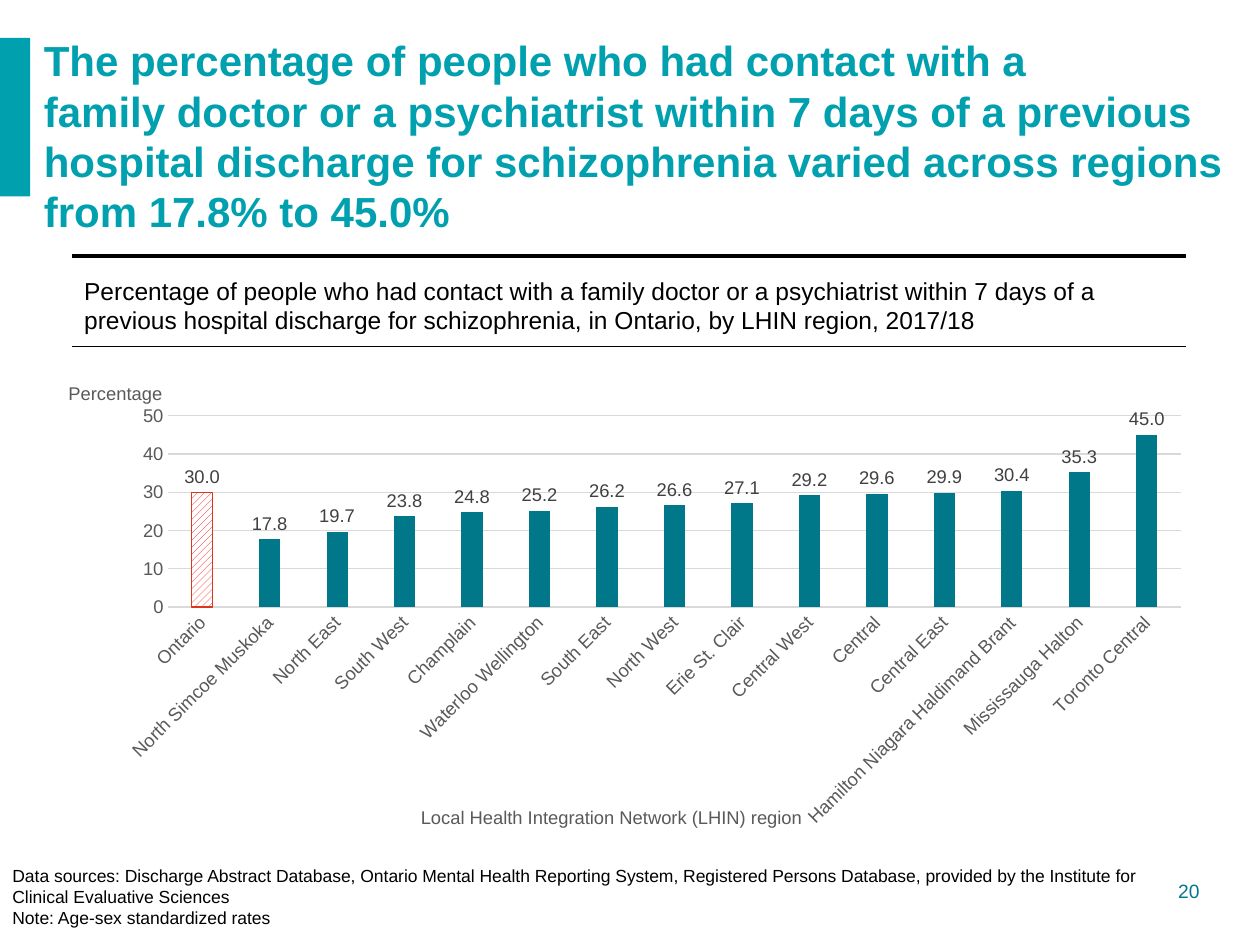
import pptx
import pptx.chart.data
import pptx.dml.color
import pptx.enum.chart
import pptx.enum.dml
import pptx.enum.shapes
import pptx.enum.text
import pptx.oxml
import pptx.oxml.ns
import pptx.util

Pt = pptx.util.Pt
qn = pptx.oxml.ns.qn

TEAL = "00A0AF"
DARK_TEAL = "00788A"
BLACK = "000000"
GREY = "595959"
LIGHT_GREY = "D9D9D9"

RATES = {
    "Ontario": 30.0,
    "North Simcoe Muskoka": 17.8,
    "North East": 19.7,
    "South West": 23.8,
    "Champlain": 24.8,
    "Waterloo Wellington": 25.2,
    "South East": 26.2,
    "North West": 26.6,
    "Erie St. Clair": 27.1,
    "Central West": 29.2,
    "Central": 29.6,
    "Central East": 29.9,
    "Hamilton Niagara Haldimand Brant": 30.4,
    "Mississauga Halton": 35.3,
    "Toronto Central": 45.0,
}


def color(hex_string):
    return pptx.dml.color.RGBColor.from_string(hex_string)


def set_layout(element, index, **fractions):
    """Place a chart part by fractions of the chart's width and height."""
    for layout in element.findall(qn("c:layout")):
        element.remove(layout)
    layout = pptx.oxml.parse_xml(f"<c:layout {pptx.oxml.ns.nsdecls('c')}><c:manualLayout/></c:layout>")
    settings = {"xMode": "edge", "yMode": "edge", **fractions}
    for name, value in settings.items():
        layout[0].makeelement(qn(f"c:{name}"))
        child = layout[0].makeelement(qn(f"c:{name}"), {"val": str(value)})
        layout[0].append(child)
    element.insert(index, layout)


class SlideBuilder:
    font_name = "Arial"
    chart_size = 10.5

    def __init__(self, slide):
        self.slide = slide

    def style_font(self, font, size, hex_string, bold=False):
        font.name = self.font_name
        font.size = Pt(size)
        font.bold = bold
        font.color.rgb = color(hex_string)

    def text(self, box, text, size, hex_string, bold=False, align="LEFT", anchor="TOP"):
        shape = self.slide.shapes.add_textbox(*map(Pt, box))
        frame = shape.text_frame
        frame.word_wrap = True
        frame.vertical_anchor = getattr(pptx.enum.text.MSO_ANCHOR, anchor)
        frame.text = text
        for paragraph in frame.paragraphs:
            paragraph.alignment = getattr(pptx.enum.text.PP_ALIGN, align)
            for run in paragraph.runs:
                self.style_font(run.font, size, hex_string, bold)

    def rectangle(self, box, hex_string):
        shape = self.slide.shapes.add_shape(
            pptx.enum.shapes.MSO_SHAPE.RECTANGLE, *map(Pt, box))
        shape.shadow.inherit = False
        shape.fill.solid()
        shape.fill.fore_color.rgb = color(hex_string)
        shape.line.fill.background()

    def rule(self, left, right, top, width):
        line = self.slide.shapes.add_connector(
            pptx.enum.shapes.MSO_CONNECTOR.STRAIGHT, Pt(left), Pt(top), Pt(right), Pt(top))
        line.line.color.rgb = color(BLACK)
        line.line.width = Pt(width)
        properties = line._element.spPr
        properties.append(properties.makeelement(qn("a:effectLst")))

    def axis(self, axis, title, x, y):
        axis.major_tick_mark = axis.minor_tick_mark = pptx.enum.chart.XL_TICK_MARK.NONE
        self.style_font(axis.tick_labels.font, self.chart_size, GREY)
        frame = axis.axis_title.text_frame
        frame.text = title
        self.style_font(frame.paragraphs[0].runs[0].font, self.chart_size, GREY)
        element = axis.axis_title._element
        body = element.find(".//" + qn("a:bodyPr"))
        body.set("rot", "0")
        body.set("vert", "horz")
        set_layout(element, 1, x=x, y=y)

    def column_chart(self, box, rates):
        data = pptx.chart.data.CategoryChartData()
        data.categories = list(rates)
        data.add_series("Series 1", list(rates.values()))
        chart = self.slide.shapes.add_chart(
            pptx.enum.chart.XL_CHART_TYPE.COLUMN_CLUSTERED, *map(Pt, box), data).chart
        chart.has_legend = False
        chart.has_title = False
        self.style_font(chart.font, self.chart_size, BLACK)
        set_layout(chart._chartSpace.chart.plotArea, 0,
                   layoutTarget="inner", x=0.108, y=0.102, w=0.862, h=0.361)
        # The schema wants layoutTarget ahead of the position modes.
        manual = chart._chartSpace.chart.plotArea[0][0]
        manual.insert(0, manual.find(qn("c:layoutTarget")))

        regions = chart.category_axis
        self.axis(regions, "Local Health Integration Network (LHIN) region", 0.32, 0.83)
        regions.format.line.color.rgb = color(LIGHT_GREY)
        regions.format.line.width = Pt(0.75)
        regions._element.find(qn("c:txPr")).find(qn("a:bodyPr")).set("rot", "-2700000")

        percentages = chart.value_axis
        self.axis(percentages, "Percentage", 0.02, 0.03)
        percentages.minimum_scale, percentages.maximum_scale = 0, 50
        percentages.major_unit = 10
        percentages.tick_labels.number_format = "0"
        percentages.tick_labels.number_format_is_linked = False
        percentages.format.line.fill.background()
        percentages.major_gridlines.format.line.color.rgb = color(LIGHT_GREY)
        percentages.major_gridlines.format.line.width = Pt(0.75)

        plot = chart.plots[0]
        plot.vary_by_categories = False
        plot.gap_width, plot.overlap = 219, -27
        series = plot.series[0]
        series.format.fill.solid()
        series.format.fill.fore_color.rgb = color(DARK_TEAL)
        labels = series.data_labels
        labels.show_value = True
        labels.position = pptx.enum.chart.XL_LABEL_POSITION.OUTSIDE_END
        labels.number_format = "0.0"
        labels.number_format_is_linked = False
        self.style_font(labels.font, self.chart_size, "404040")

        province = series.points[0].format
        province.fill.patterned()
        province.fill.pattern = pptx.enum.dml.MSO_PATTERN.WIDE_UPWARD_DIAGONAL
        province.fill.fore_color.rgb = color("FF0000")
        province.fill.back_color.rgb = color("FFFFFF")
        province.line.color.rgb = color("D9381E")
        province.line.width = Pt(0.75)


def main():
    presentation = pptx.Presentation()
    presentation.slide_width, presentation.slide_height = Pt(720), Pt(540)
    builder = SlideBuilder(presentation.slides.add_slide(presentation.slide_layouts[6]))

    builder.text((608.4, 499, 84.2, 21), "20", 11, DARK_TEAL, align="RIGHT")
    builder.rectangle((0, 21.6, 17.3, 90.7), TEAL)
    builder.text(
        (18, 21.6, 691.2, 111.6),
        "The percentage of people who had contact with a \v"
        "family doctor or a psychiatrist within 7 days of a previous hospital discharge "
        "for schizophrenia varied across regions from 17.8% to 45.0%",
        24, TEAL, bold=True, anchor="MIDDLE")
    builder.text(
        (41, 154, 633, 41),
        "Percentage of people who had contact with a family doctor or a psychiatrist within "
        "7 days of a previous hospital discharge for schizophrenia, in Ontario, by LHIN "
        "region, 2017/18", 14, BLACK)
    for top, width in ((146.2, 2.25), (198, 1)):
        builder.rule(41, 677.5, top, width)
    builder.text(
        (0, 491, 671, 44),
        "Data sources: Discharge Abstract Database, Ontario Mental Health Reporting System, "
        "Registered Persons Database, provided by the Institute for Clinical Evaluative "
        "Sciences\nNote: Age-sex standardized rates", 10, BLACK)
    builder.column_chart((23.8, 206.6, 671, 303.1), RATES)
    presentation.save("out.pptx")


if __name__ == "__main__":
    main()
